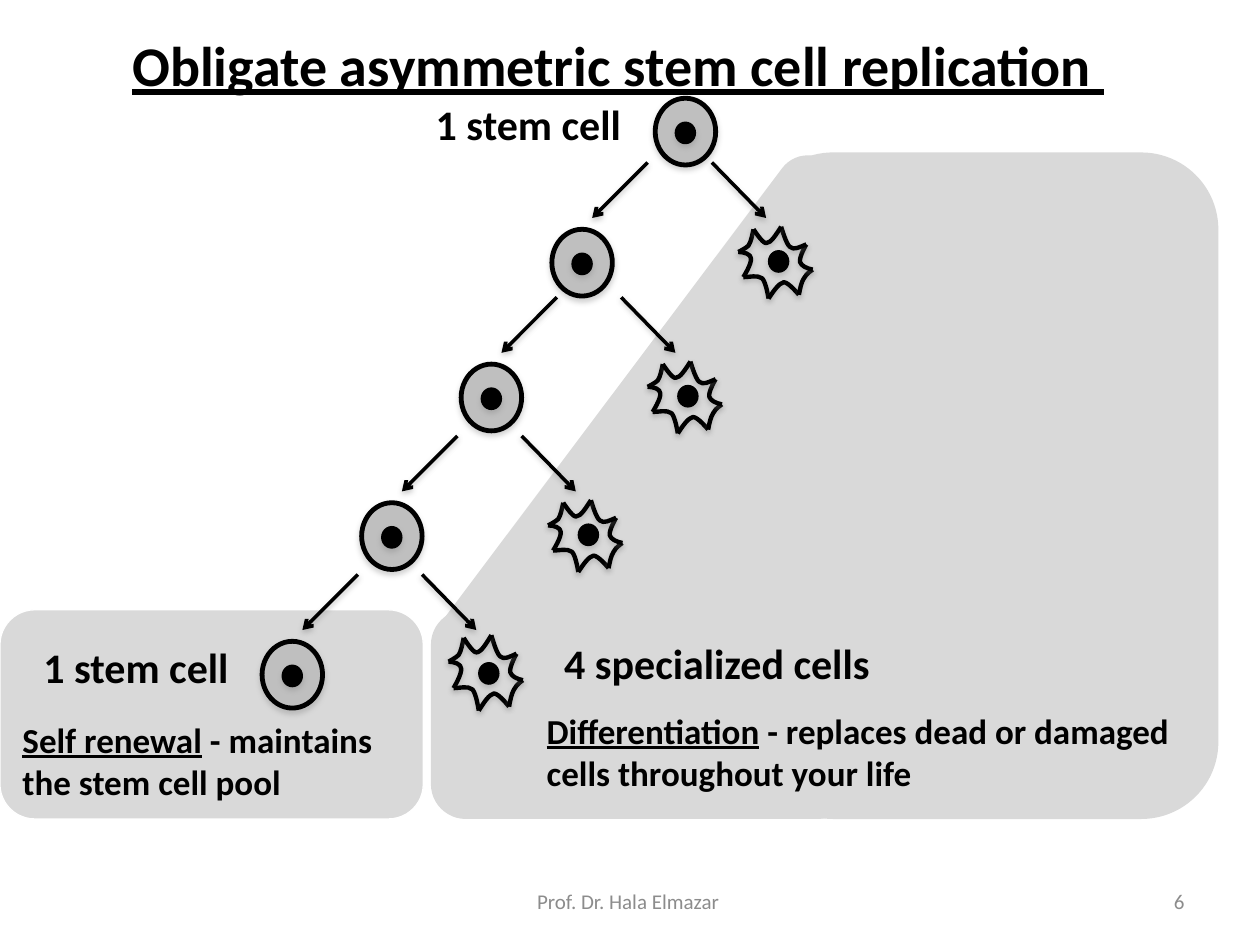
from lxml import etree
from pptx import Presentation
from pptx.dml.color import RGBColor
from pptx.enum.shapes import MSO_CONNECTOR, MSO_SHAPE
from pptx.enum.text import MSO_ANCHOR, PP_ALIGN
from pptx.oxml.ns import qn
from pptx.util import Inches, Pt

OVAL, ROUNDED, BOX = MSO_SHAPE.OVAL, MSO_SHAPE.ROUNDED_RECTANGLE, MSO_SHAPE.RECTANGLE
STRAIGHT = MSO_CONNECTOR.STRAIGHT
LEFT, CENTER, RIGHT = PP_ALIGN.LEFT, PP_ALIGN.CENTER, PP_ALIGN.RIGHT
TOP, MIDDLE = MSO_ANCHOR.TOP, MSO_ANCHOR.MIDDLE
FONT = "Calibri"
COLORS = {"black": "000000", "white": "FFFFFF", "zone": "D9D9D9",
          "cell": "BFBFBF", "footer": "8C8C8C", "shadow": "808080"}

# Left and top of the stem cell in each generation
FIRST_CELL = (5.2, 0.78)
GENERATIONS = [(4.38, 1.82), (3.66, 2.89), (2.87, 3.99), (2.08, 5.09)]

# Specialized cell outline: each side is two curves, given as
# control, control, dent, control, tip
OUTLINE_START = (0.12, 0.02)
OUTLINE_HEIGHT = 0.57
SIDES = [
    [(0.11, 0.07), (0.10, 0.12), (0.08, 0.15), (0.06, 0.17), (0.00, 0.20)],
    [(0.05, 0.20), (0.10, 0.22), (0.10, 0.25), (0.11, 0.29), (0.04, 0.40)],
    [(0.09, 0.40), (0.15, 0.38), (0.19, 0.41), (0.22, 0.44), (0.24, 0.57)],
    [(0.28, 0.51), (0.32, 0.45), (0.36, 0.44), (0.40, 0.44), (0.48, 0.54)],
    [(0.49, 0.49), (0.50, 0.44), (0.52, 0.41), (0.54, 0.37), (0.59, 0.34)],
    [(0.54, 0.33), (0.50, 0.31), (0.49, 0.28), (0.48, 0.24), (0.54, 0.14)],
    [(0.49, 0.16), (0.44, 0.19), (0.41, 0.16), (0.38, 0.14), (0.34, 0.00)],
    [(0.30, 0.06), (0.26, 0.13), (0.22, 0.13), (0.19, 0.13), (0.12, 0.02)],
]


def rgb(name):
    return RGBColor.from_string(COLORS[name])


def set_shadow(shape, distance, alpha):
    effects = etree.SubElement(shape._element.spPr, qn("a:effectLst"))
    outer = etree.SubElement(effects, qn("a:outerShdw"), blurRad=str(Pt(3.1)),
                             dist=str(Pt(distance)), dir="5400000", rotWithShape="0")
    color = etree.SubElement(outer, qn("a:srgbClr"), val=COLORS["shadow"])
    etree.SubElement(color, qn("a:alpha"), val=str(alpha * 1000))


def set_line(shape, color, width):
    shape.line.color.rgb = rgb(color)
    shape.line.width = Pt(width)


def add_filled(shapes, kind, box, fill):
    sp = shapes.add_shape(kind, *map(Inches, box))
    sp.fill.solid()
    sp.fill.fore_color.rgb = rgb(fill)
    return sp


def add_zone(shapes, kind, box):
    sp = add_filled(shapes, kind, box, "zone")
    sp.line.fill.background()
    sp.shadow.inherit = False
    return sp


def add_disc(shapes, box, fill, width):
    sp = add_filled(shapes, OVAL, box, fill)
    set_line(sp, "black", width)
    set_shadow(sp, 1.8, 35)


def add_nucleus(shapes, x, y):
    add_disc(shapes, (x, y, 0.16, 0.17), "black", 0.75)


def add_stem_cell(shapes, x, y):
    add_disc(shapes, (x, y, 0.48, 0.53), "cell", 2.75)
    add_nucleus(shapes, x + 0.16, y + 0.19)


def add_side(shapes, start, c1, c2, dent, c3, tip):
    """Draw one side of the outline as two Bezier curves; points in EMU."""
    builder = shapes.build_freeform(*start)
    builder.add_line_segments([dent, tip], close=False)
    sp = builder.convert_to_shape()
    segments = list(sp._element.iter(qn("a:lnTo")))
    for segment, controls in zip(segments, [(c1, c2), (c3, tip)]):
        curve = etree.Element(qn("a:cubicBezTo"))
        for px, py in controls:
            etree.SubElement(curve, qn("a:pt"), x=str(px - sp.left), y=str(py - sp.top))
        curve.append(segment[0])
        segment.getparent().replace(segment, curve)
    sp.fill.background()
    set_line(sp, "black", 2.5)
    set_shadow(sp, 1.6, 38)


def add_specialized_cell(shapes, x, y, stretch):
    """Draw the spiky cell with its lower edge kept in place."""
    top = y + OUTLINE_HEIGHT * (1 - stretch)
    start = OUTLINE_START
    for side in SIDES:
        add_side(shapes, *[(Inches(x + px), Inches(top + py * stretch))
                           for px, py in [start, *side]])
        start = side[-1]
    add_nucleus(shapes, x + 0.24, y + 0.19)


def add_arrow(shapes, x1, y1, x2, y2):
    cn = shapes.add_connector(STRAIGHT, *map(Inches, (x1, y1, x2, y2)))
    set_line(cn, "black", 2)
    etree.SubElement(cn.line._get_or_add_ln(), qn("a:tailEnd"), type="arrow")
    set_shadow(cn, 1.6, 38)


def add_generation(s, x, y, stretch):
    shapes = s.shapes.add_group_shape().shapes
    add_stem_cell(shapes, x, y)
    add_specialized_cell(shapes, x + 1.48, y - 0.02, stretch)
    add_arrow(shapes, x + 0.76, y - 0.53, x + 0.32, y - 0.09)
    add_arrow(shapes, x + 1.27, y - 0.53, x + 1.7, y - 0.09)


def format_run(r, size, color="black", bold=True, underline=False):
    r.font.name = FONT
    r.font.size = Pt(size)
    r.font.bold = bold
    r.font.underline = underline
    r.font.color.rgb = rgb(color)


def add_text(s, box, lines, size, align=LEFT, wrap=False, anchor=TOP,
             color="black", bold=True):
    """Write each line as a paragraph of (text, underlined) runs."""
    tf = s.shapes.add_textbox(*map(Inches, box)).text_frame
    tf.word_wrap = wrap
    tf.vertical_anchor = anchor
    for i, runs in enumerate(lines):
        p = tf.add_paragraph() if i else tf.paragraphs[0]
        p.alignment = align
        for text, underline in runs:
            r = p.add_run()
            r.text = text
            format_run(r, size, color, bold, underline)


def add_title(s, text):
    title = s.shapes.title
    title.left, title.top, title.width, title.height = map(
        Inches, (0.95, 0.19, 7.98, 0.64))
    tf = title.text_frame
    tf.text = text
    tf.word_wrap = False
    tf.vertical_anchor = TOP
    p = tf.paragraphs[0]
    p.alignment = LEFT
    format_run(p.runs[0], 32, underline=True)


def main():
    prs = Presentation()
    prs.slide_width, prs.slide_height = Inches(10), Inches(7.5)
    s = prs.slides.add_slide(prs.slide_layouts[5])
    add_title(s, "Obligate asymmetric stem cell replication ")

    # Grey zones: self renewal, then the pieces of differentiation
    renewal = add_zone(s.shapes, ROUNDED, (0, 4.84, 3.36, 1.66))
    set_line(renewal, "white", 0.75)
    slope = add_zone(s.shapes, ROUNDED, (2.94, 2.84, 5.04, 1.53))
    slope.rotation = 306.9
    add_zone(s.shapes, ROUNDED, (3.42, 4.84, 3.35, 1.66))
    add_zone(s.shapes, ROUNDED, (6, 1.21, 3.67, 5.29))
    add_zone(s.shapes, BOX, (5.38, 3.61, 1.16, 1.43))

    # Cell divisions
    add_stem_cell(s.shapes.add_group_shape().shapes, *FIRST_CELL)
    for x, y in GENERATIONS:
        is_last = (x, y) == GENERATIONS[-1]
        add_generation(s, x, y, 1.05 if is_last else 1)

    # Labels
    add_text(s, (3.36, 0.73, 1.68, 0.5), [[("1 stem cell", False)]], 24)
    add_text(s, (0.08, 5.04, 2, 0.5), [[("1 stem cell", False)]], 24, CENTER, wrap=True)
    add_text(s, (0.08, 5.65, 3.28, 1.08),
             [[("Self renewal", True), (" - maintains the stem cell pool", False)]],
             20, wrap=True)
    add_text(s, (4.38, 5.01, 2.63, 0.5), [[("4 specialized cells", False)]], 24)
    add_text(s, (4.24, 5.58, 5.19, 0.77),
             [[("Differentiation", True), (" - replaces dead or damaged", False)],
              [("cells throughout your life", False)]], 20)

    # Footer
    for box, text, align in [((3.42, 6.95, 3.17, 0.4), "Prof. Dr. Hala Elmazar ", CENTER),
                             ((7.17, 6.95, 2.33, 0.4), "6", RIGHT)]:
        add_text(s, box, [[(text, False)]], 12, align, True, MIDDLE, "footer", False)

    prs.save("out.pptx")


if __name__ == "__main__":
    main()
